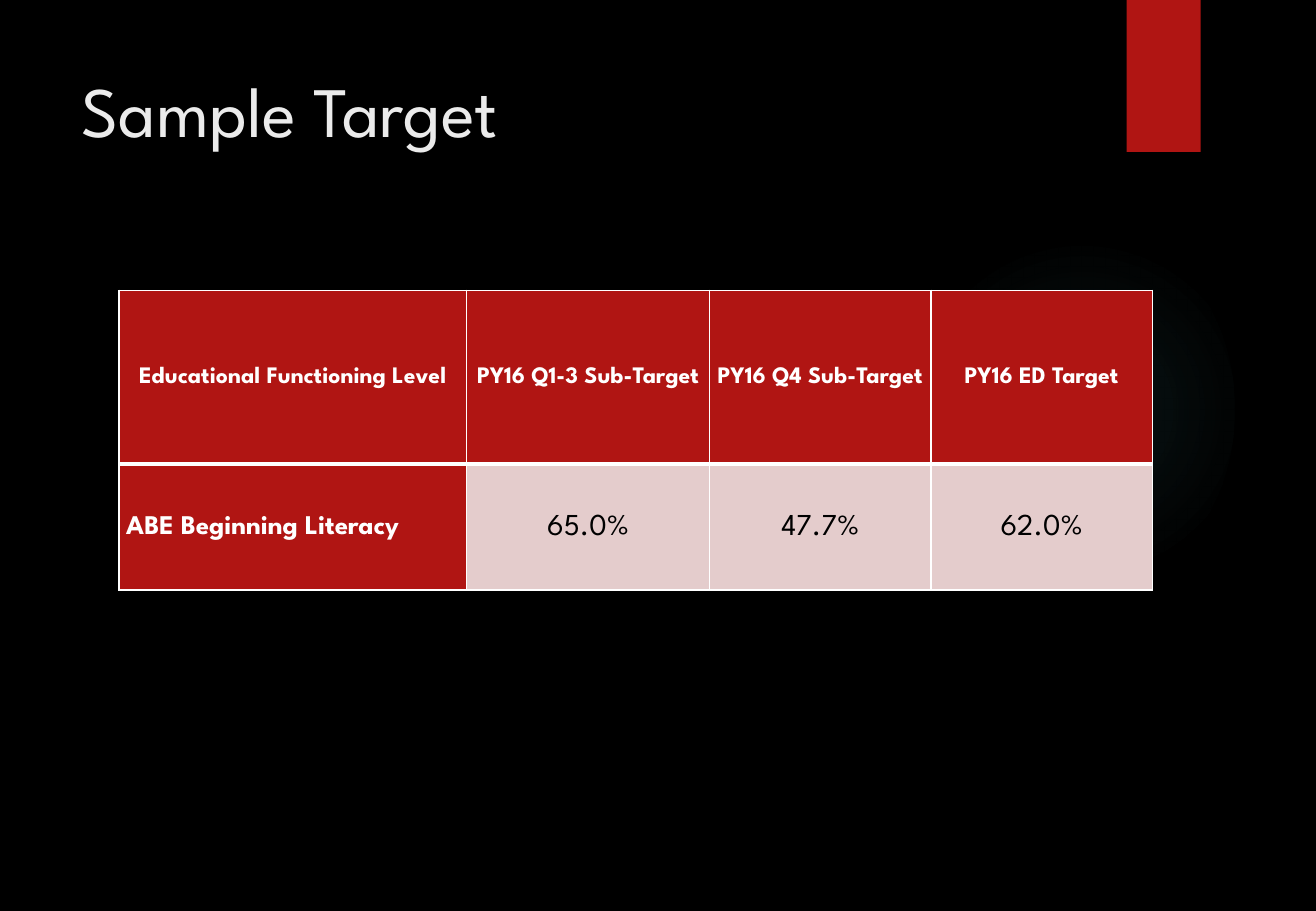
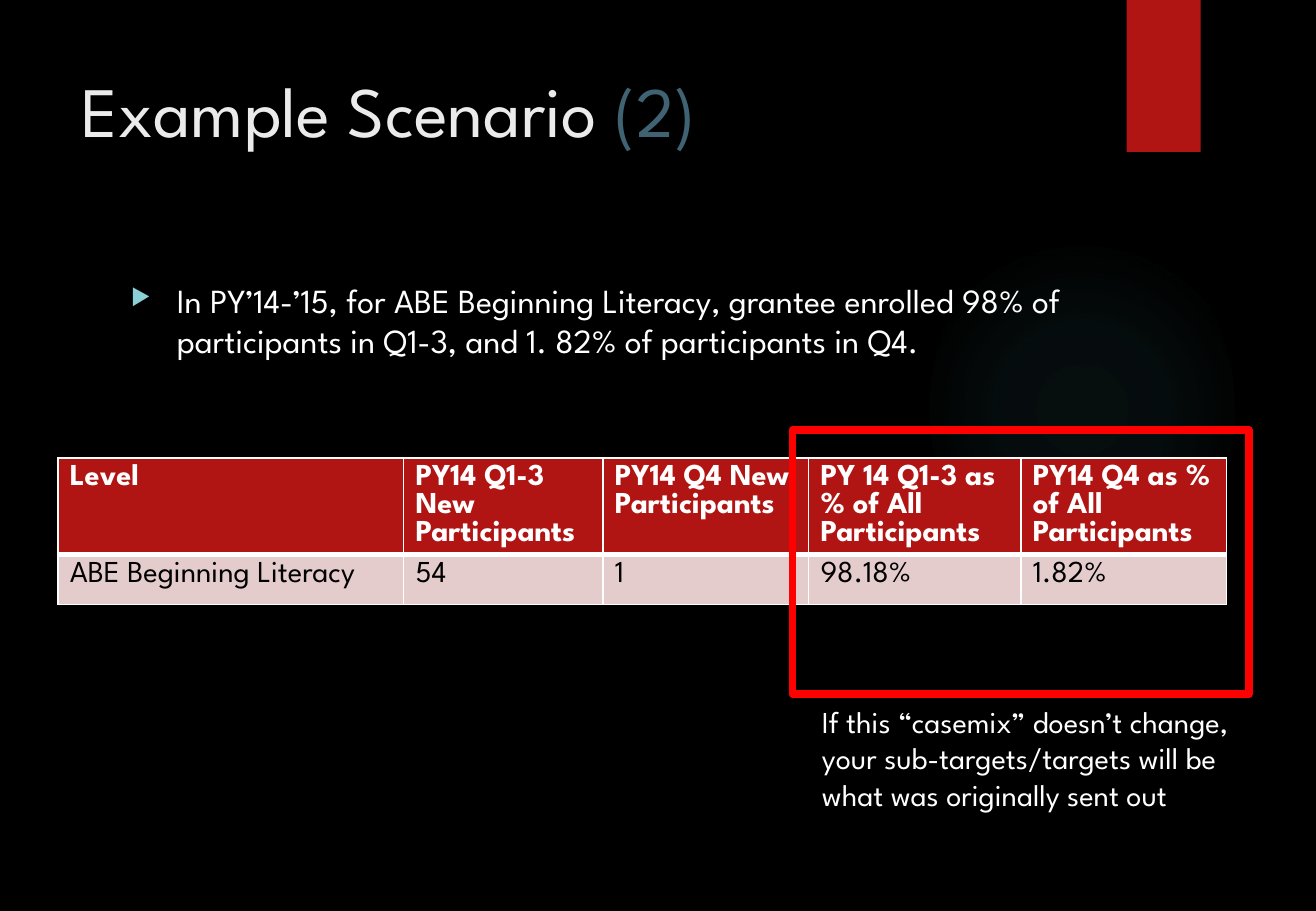
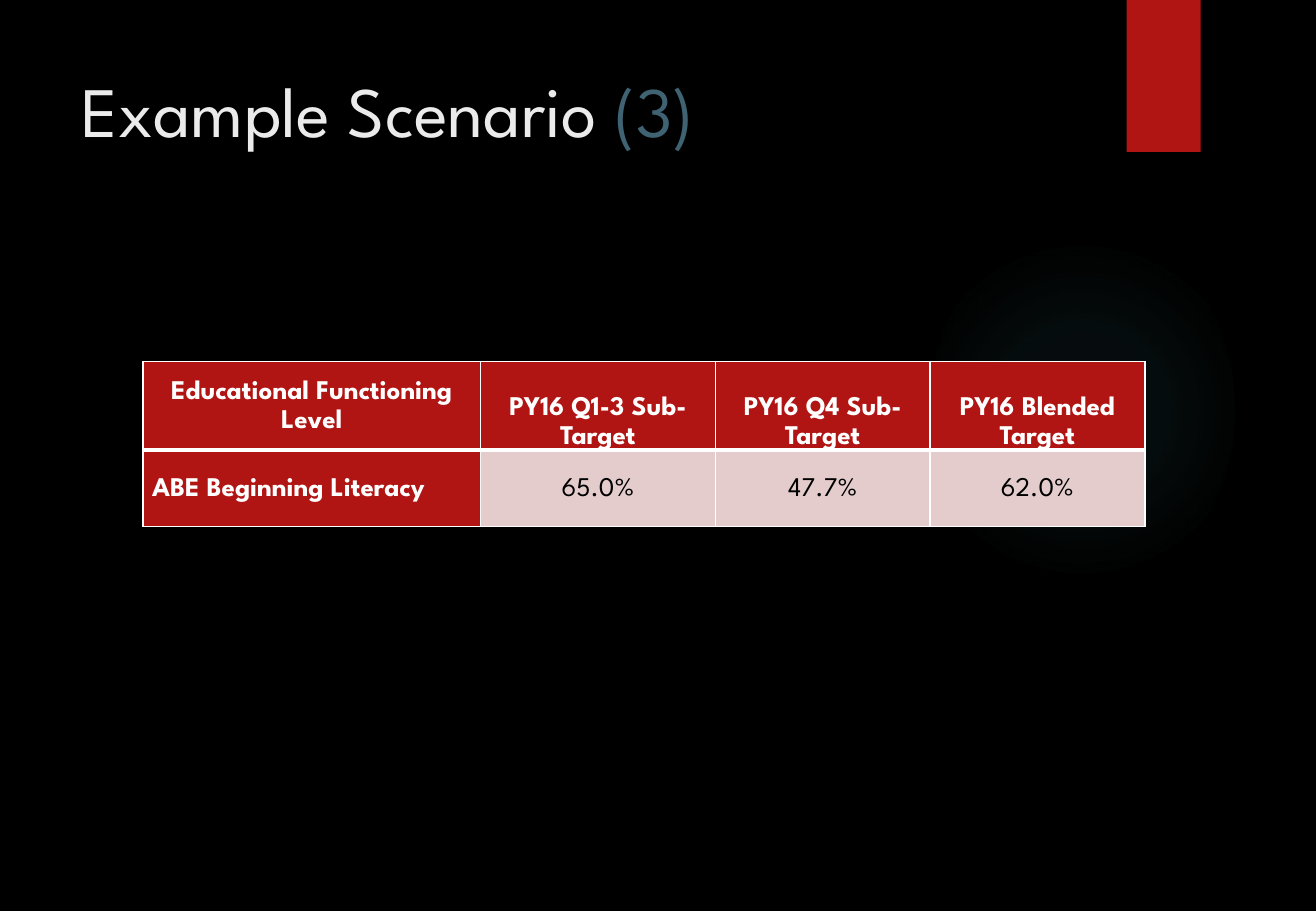
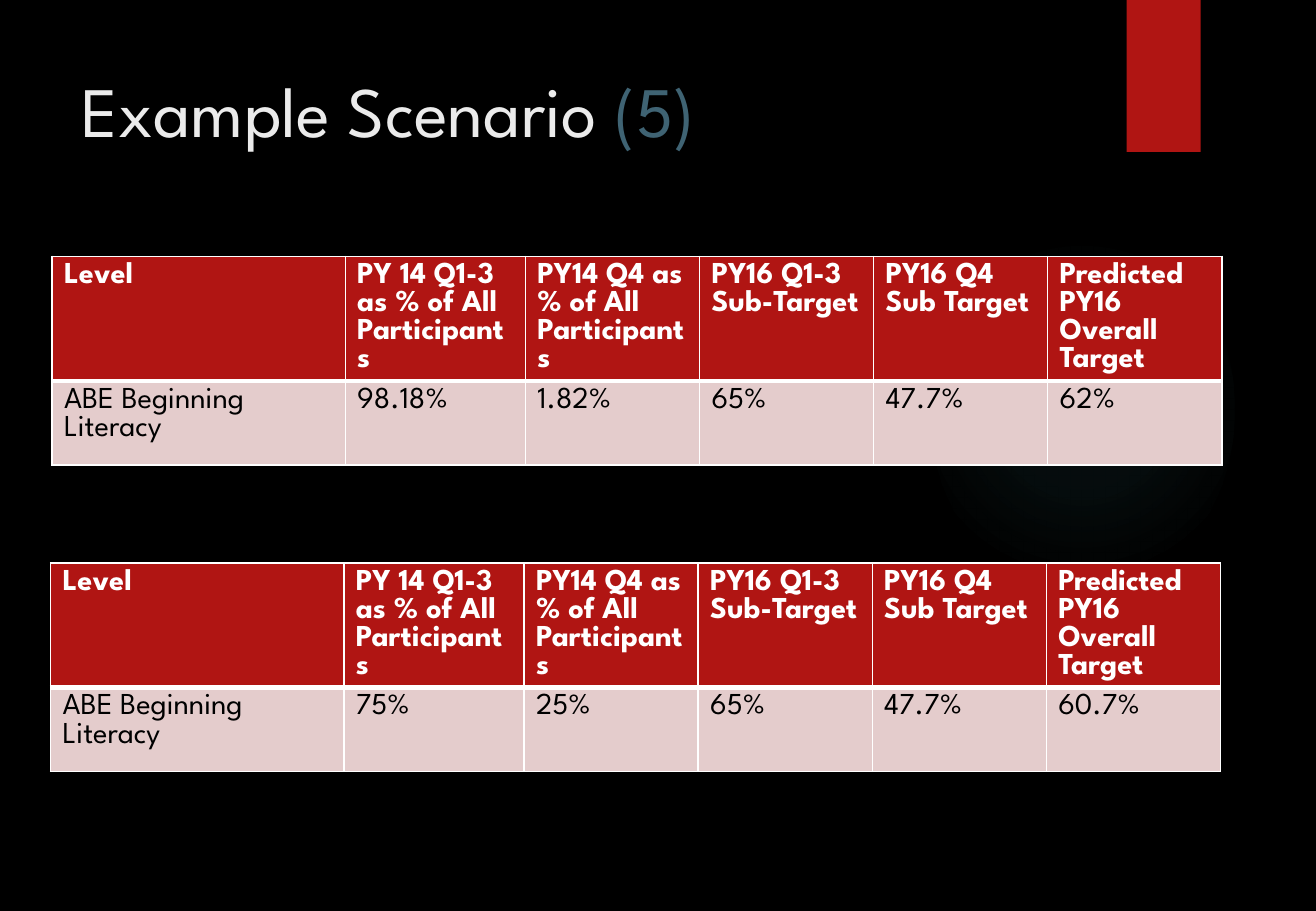
import dataclasses

import pptx
import pptx.dml.color
import pptx.enum.shapes
import pptx.enum.text
import pptx.oxml
import pptx.oxml.ns
import pptx.util

Cm = pptx.util.Cm
Pt = pptx.util.Pt
ALIGN = pptx.enum.text.PP_ALIGN
MID = pptx.enum.text.MSO_ANCHOR.MIDDLE
TOP = pptx.enum.text.MSO_ANCHOR.TOP
LOW = pptx.enum.text.MSO_ANCHOR.BOTTOM
KIND = pptx.enum.shapes.MSO_SHAPE
SPACE = pptx.oxml.ns.nsdecls("a")


@dataclasses.dataclass(frozen=True)
class Theme:
    """Colours, type sizes and font of the deck."""
    font: str = "League Spartan"
    back: str = "000000"
    red: str = "B01513"
    pink: str = "E4CCCC"
    white: str = "FFFFFF"
    black: str = "000000"
    title: str = "EBEBEB"
    count: str = "3F6373"
    glow: str = "50B9C1"
    mark: str = "8AD0D6"
    frame: str = "FF0000"
    head: int = 42
    body: int = 20
    note: int = 18
    lead: float = 1.2


@dataclasses.dataclass(frozen=True)
class Look:
    """Type sizes and cell layout of one kind of table."""
    head: int = 18
    side: int = 18
    data: int = 18
    pad: tuple = (0.25, 0.13)
    lead: object = Pt(16.6)
    first: object = TOP
    rest: object = TOP
    low: object = TOP
    align: object = ALIGN.LEFT
    stub: bool = False


THEME = Theme()
PLAIN = Look()
LARGE = Look(14, 16, 18, (0.15, 0), 1.07, MID, MID, MID, ALIGN.CENTER, True)
SMALL = Look(16, 16, 16, (0.19, 0), 1.15, MID, LOW, MID, ALIGN.CENTER, True)


def tint(code):
    """Turn a hex code into a colour."""
    return pptx.dml.color.RGBColor.from_string(code)


def node(text):
    """Build one drawing element from its markup."""
    tag, rest = text.split(" ", 1)
    return pptx.oxml.parse_xml(f"<a:{tag} {SPACE} {rest}")


def write(para, text, size, code, bold=False):
    """Add one styled run to a paragraph."""
    run = para.add_run()
    run.text = text
    run.font.name = THEME.font
    run.font.size = Pt(size)
    run.font.bold = bold
    run.font.color.rgb = tint(code)


def block(slide, box, size, runs):
    """Place a wrapped text box and return its paragraph."""
    frame = slide.shapes.add_textbox(*map(Cm, box)).text_frame
    frame.word_wrap = True
    para = frame.paragraphs[0]
    para.line_spacing = Pt(round(size * THEME.lead, 1))
    for text, code in runs:
        write(para, text, size, code)
    return para


def bullet(slide, box, text):
    """Place a paragraph with a triangle bullet."""
    para = block(slide, box, THEME.body, [(text, THEME.white)])
    props = para._p.get_or_add_pPr()
    props.set("marL", str(Cm(0.96)))
    props.set("indent", str(-Cm(0.96)))
    for mark in (
        f'buClr ><a:srgbClr val="{THEME.mark}"/></a:buClr>',
        'buSzPct val="67000"/>',
        'buChar char="▶"/>',
    ):
        props.append(node(mark))


def shape(slide, kind, box):
    """Place a bare preset shape without fill, line or shadow."""
    item = slide.shapes.add_shape(kind, *map(Cm, box))
    item.shadow.inherit = False
    item.fill.background()
    item.line.fill.background()
    return item


def halo(slide, box):
    """Place the faint round glow."""
    item = shape(slide, KIND.OVAL, box)
    stops = "".join(
        f'<a:gs pos="{place}000"><a:srgbClr val="{THEME.glow}">'
        f'<a:alpha val="{alpha}000"/></a:srgbClr></a:gs>'
        for place, alpha in ((0, 7), (36, 6), (69, 0))
    )
    fill = node(
        f'gradFill rotWithShape="1"><a:gsLst>{stops}</a:gsLst>'
        '<a:path path="circle"><a:fillToRect l="50000" t="50000" '
        'r="50000" b="50000"/></a:path></a:gradFill>'
    )
    props = item._element.spPr
    props.replace(props.find(pptx.oxml.ns.qn("a:noFill")), fill)


def frame(slide, box):
    """Outline a region in bright red."""
    item = shape(slide, KIND.RECTANGLE, box)
    item.line.color.rgb = tint(THEME.frame)
    item.line.width = Pt(4.5)


def start(deck, title, count=""):
    """Add a slide with the glow, the red tab and the title."""
    slide = deck.slides.add_slide(deck.slide_layouts[6])
    halo(slide, (19.44, 4.66, 6.37, 7.82))
    tab = shape(slide, KIND.RECTANGLE, (23.56, 0, 1.55, 3.18))
    tab.fill.solid()
    tab.fill.fore_color.rgb = tint(THEME.red)
    runs = [(title, THEME.title)]
    if count:
        runs = [(title + " ", THEME.title), (count, THEME.count)]
    block(slide, (1.46, 1.27, 21.23, 3.89), THEME.head, runs)
    return slide


def border(cell, top, base):
    """Draw white lines round a cell."""
    props = cell._tc.get_or_add_tcPr()
    sides = (("L", 1), ("R", 1), ("T", top), ("B", base))
    for place, (side, width) in enumerate(sides):
        props.insert(place, node(
            f'ln{side} w="{Pt(width)}"><a:solidFill><a:srgbClr '
            f'val="{THEME.white}"/></a:solidFill></a:ln{side}>'
        ))


def fill(cell, text, look, row, col):
    """Fill and style one table cell."""
    head = row == 0
    side = look.stub and col == 0
    strong = head or side
    cell.fill.solid()
    cell.fill.fore_color.rgb = tint(THEME.red if strong else THEME.pink)
    border(cell, 1 if head else 3, 3 if head else 1)
    wide, high = map(Cm, look.pad)
    cell.margin_left = cell.margin_right = wide
    cell.margin_top = cell.margin_bottom = high
    upper = look.first if col == 0 else look.rest
    cell.vertical_anchor = upper if head else look.low
    para = cell.text_frame.paragraphs[0]
    para.alignment = ALIGN.LEFT if side and not head else look.align
    para.line_spacing = look.lead
    size = look.head if head else look.side if side else look.data
    write(para, text, size, THEME.white if strong else THEME.black, strong)


def grid(slide, spot, cols, rows, data, look):
    """Place a table at a spot, with its column and row sizes."""
    box = (*spot, sum(cols), sum(rows))
    table = slide.shapes.add_table(
        len(rows), len(cols), *map(Cm, box)).table
    for col, width in zip(table.columns, cols):
        col.width = Cm(width)
    for row, height in zip(table.rows, rows):
        row.height = Cm(height)
    for row, line in enumerate(data):
        for col, text in enumerate(line):
            fill(table.cell(row, col), text, look, row, col)


def target(deck, title, count, last, spot, cols, rows, look):
    """Build a slide with one table of targets."""
    slide = start(deck, title, count)
    grid(slide, spot, cols, rows, [
        ["Educational Functioning Level", "PY16 Q1-3 Sub-Target",
         "PY16 Q4 Sub-Target", last],
        ["ABE Beginning Literacy", "65.0%", "47.7%", "62.0%"],
    ], look)


def casemix(deck):
    """Build the slide on shares of enrolment."""
    slide = start(deck, "Example Scenario", "(2)")
    bullet(
        slide, (2.49, 5.72, 20.19, 11.66),
        "In PY’14-’15, for ABE Beginning Literacy, grantee enrolled 98% of "
        "participants in Q1-3, and 1. 82% of participants in Q4.")
    grid(slide, (1.21, 9.58), (7.23, 4.17, 4.3, 4.44, 4.3), (2.01, 1.04), [
        ["Level", "PY14 Q1-3 New Participants", "PY14 Q4 New Participants",
         "PY 14 Q1-3 as % of All Participants",
         "PY14 Q4 as % of All Participants"],
        ["ABE Beginning Literacy", "54", "1", "98.18%", "1.82%"],
    ], PLAIN)
    block(slide, (16.94, 14.58, 9.17, 3.33), THEME.note, [(
        "If this “casemix” doesn’t change, your sub-targets/targets "
        "will be what was originally sent out", THEME.white)])
    frame(slide, (16.57, 8.99, 9.55, 5.53))


def compare(deck):
    """Build the slide with two predictions."""
    slide = start(deck, "Example Scenario", "(5)")
    heads = [
        "Level", "PY 14 Q1-3 as % of All Participants",
        "PY14 Q4 as % of All Participants", "PY16 Q1-3 Sub-Target",
        "PY16 Q4 Sub Target", "Predicted PY16 Overall Target",
    ]
    cols = (6.13, 3.77, *[3.64] * 4)
    for spot, early, late, total in (
        ((1.09, 5.36), "98.18%", "1.82%", "62%"),
        ((1.06, 11.77), "75%", "25%", "60.7%"),
    ):
        line = ["ABE Beginning Literacy", early, late, "65%", "47.7%", total]
        grid(slide, spot, cols, (2.59, 1.76), [heads, line], PLAIN)


def main():
    """Build and save the deck."""
    deck = pptx.Presentation()
    deck.slide_width, deck.slide_height = Cm(27.52), Cm(19.05)
    back = deck.slide_master.background.fill
    back.solid()
    back.fore_color.rgb = tint(THEME.back)
    target(deck, "Sample Target", "", "PY16 ED Target", (2.49, 6.07),
           (7.27, 5.08, 4.63, 4.63), (3.63, 2.64), LARGE)
    casemix(deck)
    target(deck, "Example Scenario", "(3)", "PY16 Blended Target",
           (2.99, 7.56), (7.06, 4.91, 4.49, 4.49), (1.85, 1.6), SMALL)
    compare(deck)
    deck.save("out.pptx")


if __name__ == "__main__":
    main()
